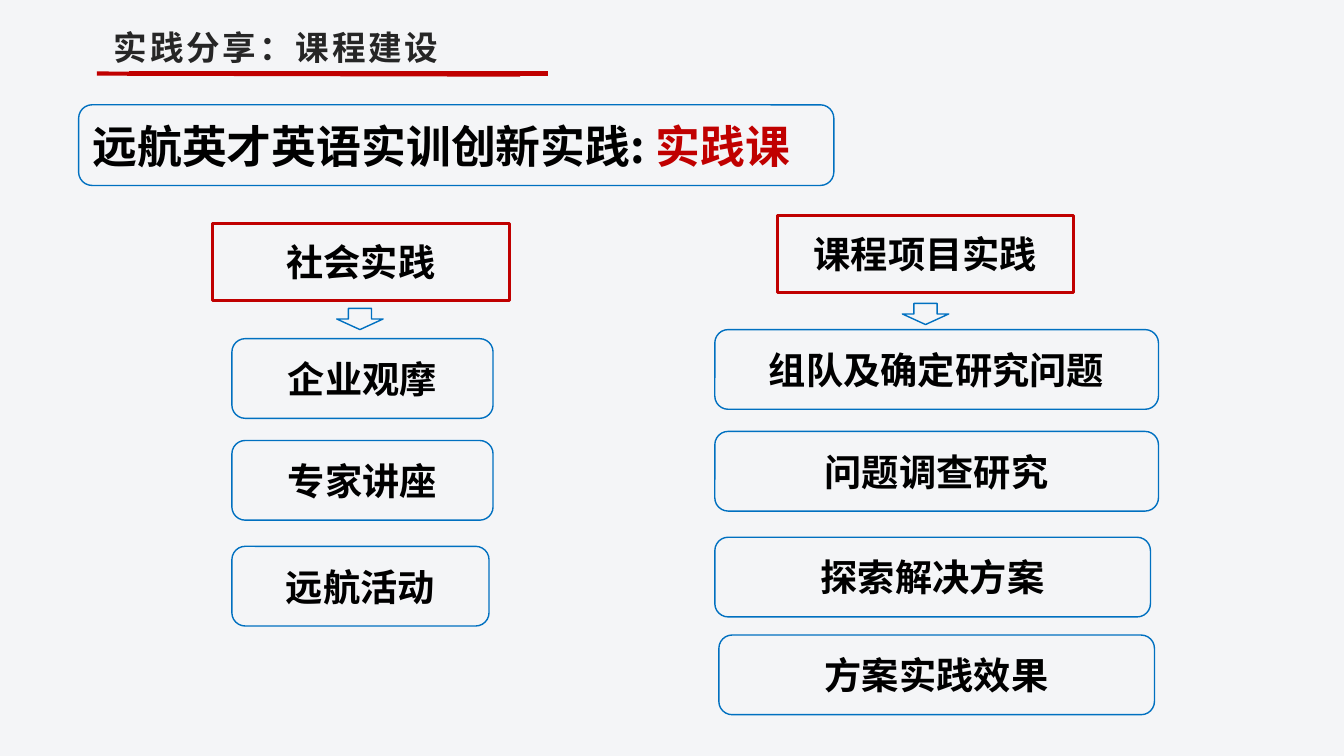
"""Build the slide on practice classes in the course."""
from dataclasses import dataclass

from lxml import etree
from pptx import Presentation
from pptx import util as u
from pptx.dml.color import RGBColor
from pptx.enum import shapes, text
from pptx.oxml import ns

BLUE = RGBColor(0x00, 0x70, 0xC0)
RED = RGBColor(0xC0, 0x00, 0x00)
BLACK = RGBColor(0x00, 0x00, 0x00)
GREY = RGBColor(0x26, 0x26, 0x26)
PALE = RGBColor(0xF4, 0xF5, 0xF7)
SANS = "Noto Sans CJK SC"
ROUND = shapes.MSO_SHAPE.ROUNDED_RECTANGLE
RECT = shapes.MSO_SHAPE.RECTANGLE
ARROW = shapes.MSO_SHAPE.DOWN_ARROW
MID = text.PP_ALIGN.CENTER
LEFT = text.PP_ALIGN.LEFT


@dataclass
class Run:
    """A stretch of bold text."""
    words: str
    size: float = 26.6
    color: RGBColor = BLACK
    face: str = SANS


@dataclass
class Box:
    """An outlined shape with optional text."""
    left: float
    top: float
    width: float
    height: float = 0.79
    runs: tuple[Run, ...] = ()
    kind: int = ROUND
    color: RGBColor = BLUE
    weight: float = 1
    align: int = MID


@dataclass
class Rule:
    """A red line under the heading."""
    left: float
    top: float
    right: float
    base: float


@dataclass
class Track:
    """A practice type: its head, arrow and steps."""
    head: Box
    arrow: Box
    steps: tuple[Box, ...]


def step(left: float, top: float, width: float, words: str) -> Box:
    """Make a rounded step box."""
    return Box(left, top, width, runs=(Run(words),))


def head(left: float, top: float, words: str) -> Box:
    """Make a red head box."""
    return Box(left, top, 2.94, 0.76, (Run(words),), RECT, RED, 2.25)


def arrow(left: float, top: float) -> Box:
    """Make a small down arrow."""
    return Box(left, top, 0.46, 0.21, kind=ARROW)


TITLE = Box(0.78, 1.04, 7.49, 0.8, (
    Run("远航英才英语实训创新实践: ", 32), Run("实践课", 32, RED)), align=LEFT)
RULES = (Rule(1.28, 0.73, 5.44, 0.73), Rule(0.96, 0.73, 5.16, 0.74))
TRACKS = (
    Track(head(2.11, 2.22, "社会实践"), arrow(3.34, 3.06), (
        step(2.3, 3.36, 2.59, "企业观摩"),
        step(2.3, 4.37, 2.59, "专家讲座"),
        step(2.3, 5.42, 2.55, "远航活动"))),
    Track(head(7.71, 2.14, "课程项目实践"), arrow(8.95, 3.01), (
        step(7.09, 3.27, 4.4, "组队及确定研究问题"),
        step(7.09, 4.28, 4.4, "问题调查研究"),
        step(7.09, 5.33, 4.32, "探索解决方案"),
        step(7.13, 6.3, 4.32, "方案实践效果"))),
)


def add_run(para, run: Run, gap: int = 0) -> None:
    """Add a run, with letter gap in hundredths of a point."""
    part = para.add_run()
    part.text = run.words
    form = {"size": u.Pt(run.size), "bold": True, "name": run.face}
    for key, val in form.items():
        setattr(part.font, key, val)
    part.font.color.rgb = run.color
    props = part.font._element
    etree.SubElement(props, ns.qn("a:ea"), typeface=run.face)
    if gap:
        props.set("spc", str(gap))


def add_box(slide, box: Box) -> None:
    """Draw one outlined shape."""
    shape = slide.shapes.add_shape(
        box.kind, *map(u.Inches, (box.left, box.top, box.width, box.height)))
    shape.shadow.inherit = False
    shape.fill.background()
    shape.line.color.rgb = box.color
    shape.line.width = u.Pt(box.weight)
    frame = shape.text_frame
    form = {"word_wrap": True, "vertical_anchor": text.MSO_ANCHOR.MIDDLE}
    for key, val in form.items():
        setattr(frame, key, val)
    para = frame.paragraphs[0]
    para.alignment = box.align
    for run in box.runs:
        add_run(para, run)


def add_rule(slide, rule: Rule) -> None:
    """Draw one red line."""
    line = slide.shapes.add_connector(
        shapes.MSO_CONNECTOR.STRAIGHT,
        *map(u.Inches, (rule.left, rule.top, rule.right, rule.base)))
    line.line.color.rgb = RED
    line.line.width = u.Pt(3)
    etree.SubElement(line._element.spPr, ns.qn("a:effectLst"))


def add_label(slide) -> None:
    """Write the heading at the top."""
    label = slide.shapes.add_textbox(
        *map(u.Inches, (1.03, 0.22, 4.19, 0.5)))
    frame = label.text_frame
    form = {"word_wrap": True, "auto_size": text.MSO_AUTO_SIZE.SHAPE_TO_FIT_TEXT}
    for key, val in form.items():
        setattr(frame, key, val)
    run = Run("实践分享：课程建设", 24, GREY, "League Spartan")
    add_run(frame.paragraphs[0], run, 200)


def main() -> None:
    """Build and save the slide."""
    deck = Presentation()
    deck.slide_width = u.Inches(13.33)
    deck.slide_height = u.Inches(7.5)
    slide = deck.slides.add_slide(deck.slide_layouts[6])
    slide.background.fill.solid()
    slide.background.fill.fore_color.rgb = PALE
    add_box(slide, TITLE)
    for rule in RULES:
        add_rule(slide, rule)
    add_label(slide)
    for track in TRACKS:
        for box in (track.head, track.arrow, *track.steps):
            add_box(slide, box)
    deck.save("out.pptx")


if __name__ == "__main__":
    main()
